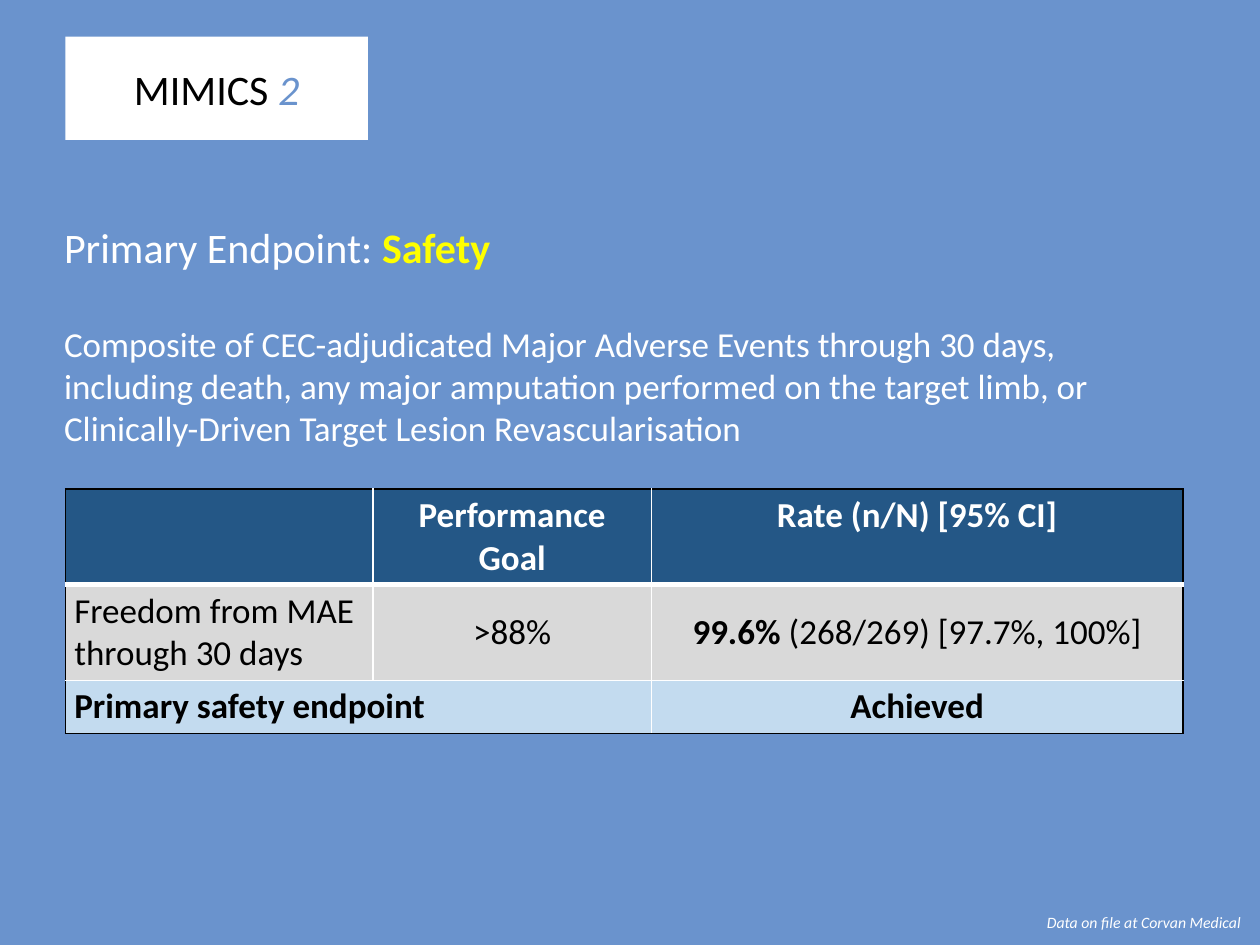
from lxml import etree
from pptx import Presentation
from pptx import util as u
from pptx.dml.color import RGBColor
from pptx.enum import shapes, text
from pptx.oxml import ns

BLACK = RGBColor(0x00, 0x00, 0x00)
WHITE = RGBColor(0xFF, 0xFF, 0xFF)
YELLOW = RGBColor(0xFF, 0xFF, 0x00)
SKY = RGBColor(0x6A, 0x93, 0xCD)
NAVY = RGBColor(0x24, 0x57, 0x86)
GREY = RGBColor(0xD9, 0xD9, 0xD9)
PALE = RGBColor(0xC3, 0xDB, 0xEF)
LEFT, CENTER = text.PP_ALIGN.LEFT, text.PP_ALIGN.CENTER
TOP, MIDDLE = text.MSO_ANCHOR.TOP, text.MSO_ANCHOR.MIDDLE

presentation = Presentation()
presentation.slide_width, presentation.slide_height = u.Inches(10), u.Inches(7.5)
# The slide is a grid of 100 columns by 75 rows.
COLUMN = presentation.slide_width / 100
ROW = presentation.slide_height / 75
slide = presentation.slides.add_slide(presentation.slide_layouts[6])
slide.background.fill.solid()
slide.background.fill.fore_color.rgb = SKY


def grid(left, top, width, height):
    """Turn columns and rows of the slide grid into lengths."""
    return [int(n * unit) for n, unit in zip((left, top, width, height), (COLUMN, ROW) * 2)]


def write_runs(paragraph, runs, size, alignment=LEFT):
    """Add runs given as (words, colour, further font values)."""
    paragraph.alignment = alignment
    for words, color, values in runs:
        run = paragraph.add_run()
        run.text = words
        for name, value in {"name": "Calibri", "size": u.Pt(size), **values}.items():
            setattr(run.font, name, value)
        run.font.color.rgb = color


# Results table
table_frame = slide.shapes.add_table(3, 3, *grid(5.2, 38.8, 88.7, 19.2))
table = table_frame.table
for column, width in zip(table.columns, (24.4, 22.1, 42.2)):
    column.width = int(width * COLUMN)
for row, height in zip(table.rows, (7.5, 7.6, 4.1)):
    row.height = int(height * ROW)
table.cell(2, 0).merge(table.cell(2, 1))

BOLD = {"bold": True}
PLAIN = {"bold": False}
results = [
    (NAVY, TOP, [
        [],
        [("Performance Goal", WHITE, BOLD)],
        [("Rate (n/N) [95% CI]", WHITE, BOLD)],
    ]),
    (GREY, MIDDLE, [
        [("Freedom from MAE through 30 days", BLACK, PLAIN)],
        [(">88%", BLACK, PLAIN)],
        [("99.6%", BLACK, BOLD), (" (268/269) [97.7%, 100%]", BLACK, PLAIN)],
    ]),
    (PALE, MIDDLE, [
        [("Primary safety endpoint", BLACK, BOLD)],
        [],
        [("Achieved", BLACK, BOLD)],
    ]),
]
cell_format = {
    "margin_left": u.Inches(0.07), "margin_right": u.Inches(0.07),
    "margin_top": u.Inches(0.04), "margin_bottom": u.Inches(0.04),
}
for r, (fill, anchor, row_runs) in enumerate(results):
    for c, runs in enumerate(row_runs):
        cell = table.cell(r, c)
        for name, value in {**cell_format, "vertical_anchor": anchor}.items():
            setattr(cell, name, value)
        write_runs(cell.text_frame.paragraphs[0], runs, 20, CENTER if c else LEFT)
        # Black around the table, white inside, thick under the header
        borders = {
            "lnL": (c == 0, 1), "lnR": (c == 2, 1),
            "lnT": (r == 0, 3 if r == 1 else 1), "lnB": (r == 2, 3 if r == 0 else 1),
        }
        properties = cell._tc.get_or_add_tcPr()
        for tag, (outer, points) in borders.items():
            line = etree.SubElement(properties, ns.qn(f"a:{tag}"), w=str(u.Pt(points)))
            line_fill = etree.SubElement(line, ns.qn("a:solidFill"))
            etree.SubElement(line_fill, ns.qn("a:srgbClr"), val=str(BLACK if outer else WHITE))
        cell.fill.solid()
        cell.fill.fore_color.rgb = fill

# Heading, definition and source note
text_boxes = [
    ((4.1, 17.1, 36.2, 5), 24, False, 1.0,
     [("Primary Endpoint: ", WHITE, {}), ("Safety", YELLOW, BOLD)]),
    ((4.1, 25.1, 91.1, 11.1), 20, True, 1.0,
     [("Composite of CEC-adjudicated Major Adverse Events through 30 days, including death, "
       "any major amputation performed on the target limb, or Clinically-Driven Target "
       "Lesion Revascularisation", WHITE, {})]),
    ((82.1, 72.1, 17.8, 1.8), 9, True, 0.9,
     [("Data on file at Corvan Medical", WHITE, {"italic": True})]),
]
for place, size, wrap, spacing, runs in text_boxes:
    frame = slide.shapes.add_textbox(*grid(*place)).text_frame
    frame.word_wrap = wrap
    paragraph = frame.paragraphs[0]
    paragraph.line_spacing = spacing
    write_runs(paragraph, runs, size)

# Study name
study_label = slide.shapes.add_shape(shapes.MSO_SHAPE.RECTANGLE, *grid(5.2, 2.9, 24, 8.2))
study_label.shadow.inherit = False
study_label.fill.solid()
study_label.fill.fore_color.rgb = WHITE
study_label.line.fill.background()
study_label.text_frame.vertical_anchor = MIDDLE
write_runs(study_label.text_frame.paragraphs[0],
           [("MIMICS", BLACK, {}), (" 2", SKY, {"italic": True})], 24, CENTER)

presentation.save("out.pptx")
